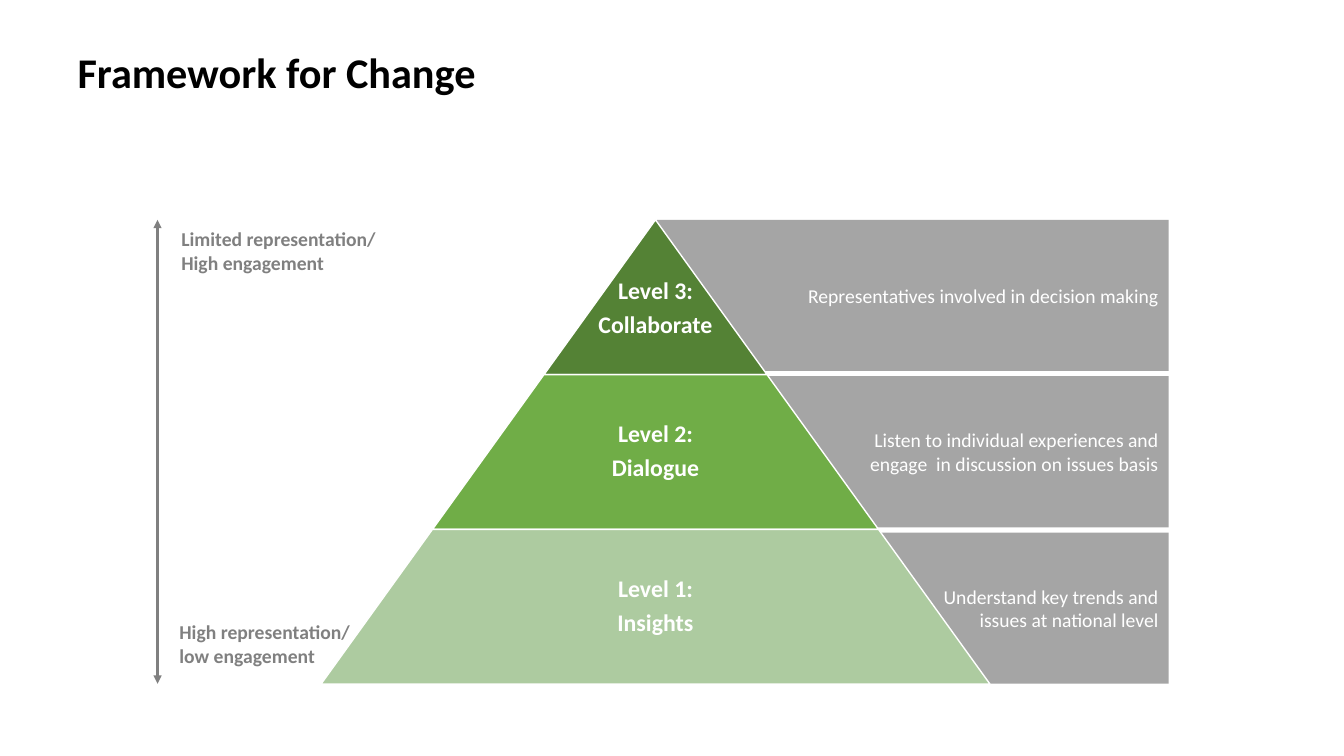
from dataclasses import dataclass

from lxml import etree
from pptx import Presentation
from pptx.dml.color import RGBColor
from pptx.enum.shapes import MSO_CONNECTOR, MSO_SHAPE
from pptx.enum.text import MSO_ANCHOR, MSO_AUTO_SIZE, PP_ALIGN
from pptx.oxml.ns import qn
from pptx.util import Cm, Pt

LEFT, CENTER, RIGHT = PP_ALIGN.LEFT, PP_ALIGN.CENTER, PP_ALIGN.RIGHT
TOP, MIDDLE, BOTTOM = MSO_ANCHOR.TOP, MSO_ANCHOR.MIDDLE, MSO_ANCHOR.BOTTOM
RECTANGLE, TRAPEZOID = MSO_SHAPE.RECTANGLE, MSO_SHAPE.TRAPEZOID


@dataclass(frozen=True)
class Theme:
    font: str = "Calibri"
    black: RGBColor = RGBColor(0x00, 0x00, 0x00)
    white: RGBColor = RGBColor(0xFF, 0xFF, 0xFF)
    panel: RGBColor = RGBColor(0xA5, 0xA5, 0xA5)
    axis: RGBColor = RGBColor(0x80, 0x80, 0x80)
    dark_green: RGBColor = RGBColor(0x54, 0x82, 0x35)
    green: RGBColor = RGBColor(0x70, 0xAD, 0x47)
    pale_green: RGBColor = RGBColor(0xAD, 0xCB, 0xA0)
    title_size: float = 30.2
    level_size: float = 17
    body_size: float = 14


THEME = Theme()


def write_text(shape, text, size, color, bold, align, anchor):
    """Fill a shape with text, one paragraph per line."""
    frame = shape.text_frame
    frame.word_wrap = True
    frame.auto_size = MSO_AUTO_SIZE.NONE
    frame.vertical_anchor = anchor
    frame.text = text
    for paragraph in frame.paragraphs:
        paragraph.alignment = align
        font = paragraph.runs[0].font
        font.name = THEME.font
        font.size = Pt(size)
        font.bold = bold
        font.color.rgb = color


def add_filled_shape(kind, left, top, width, height, color):
    """Add a flat preset shape without outline; lengths in cm."""
    shape = slide.shapes.add_shape(kind, Cm(left), Cm(top), Cm(width), Cm(height))
    shape.shadow.inherit = False
    shape.fill.solid()
    shape.fill.fore_color.rgb = color
    shape.line.fill.background()
    return shape


presentation = Presentation()
presentation.slide_width = Cm(33.87)
presentation.slide_height = Cm(19.05)
slide = presentation.slides.add_slide(presentation.slide_layouts[5])

# Title
title = slide.shapes.title
title.left, title.top, title.width, title.height = Cm(1.7), Cm(1.19), Cm(21.92), Cm(2.49)
write_text(title, "Framework for Change", THEME.title_size, THEME.black, True, LEFT, TOP)
title.text_frame.paragraphs[0].line_spacing = 0.9

# Grey description panels, behind the pyramid
diagram_top = 5.54
panel_right, panel_height, panel_step = 29.45, 3.81, 3.94
panels = [
    (16.56, "Representatives involved in decision making"),
    (18.75, "Listen to individual experiences and\nengage  in discussion on issues basis"),
    (21.84, "Understand key trends and\nissues at national level"),
]
for row, (left, description) in enumerate(panels):
    panel = add_filled_shape(RECTANGLE, left, diagram_top + row * panel_step,
                             panel_right - left, panel_height, THEME.panel)
    write_text(panel, description, THEME.body_size, THEME.white, False, RIGHT, MIDDLE)

# Pyramid tiers; each one widens by the same slope on both sides
apex_x, tier_height, tier_slope = 16.52, 3.9, 2.81
label_width, label_inset = 5.6, 0.05
tiers = [
    ("Level 3:\nCollaborate", THEME.dark_green, 0.6),
    ("Level 2:\nDialogue", THEME.green, 0),
    ("Level 1:\nInsights", THEME.pale_green, 0),
]
for row, (level, color, extra_inset) in enumerate(tiers):
    half_width = tier_slope * (row + 1)
    top = diagram_top + row * tier_height
    tier = add_filled_shape(TRAPEZOID, apex_x - half_width, top,
                            2 * half_width, tier_height, color)
    tier.adjustments[0] = tier_slope / tier_height
    tier.line.color.rgb = THEME.white
    tier.line.width = Pt(1)

    label = slide.shapes.add_textbox(Cm(apex_x - label_width / 2), Cm(top),
                                     Cm(label_width), Cm(tier_height))
    write_text(label, level, THEME.level_size, THEME.white, True, CENTER, MIDDLE)
    frame = label.text_frame
    frame.margin_left = frame.margin_right = frame.margin_bottom = Cm(label_inset)
    frame.margin_top = Cm(label_inset + extra_inset)
    for paragraph in frame.paragraphs:
        paragraph.line_spacing = 0.9
        paragraph.space_after = Pt(6)

# Double-headed engagement axis
axis_x, axis_bottom = 3.97, 17.23
axis = slide.shapes.add_connector(MSO_CONNECTOR.STRAIGHT, Cm(axis_x), Cm(diagram_top),
                                  Cm(axis_x), Cm(axis_bottom))
axis.line.color.rgb = THEME.axis
axis.line.width = Pt(1.5)
for end in ("a:headEnd", "a:tailEnd"):
    etree.SubElement(axis.line._get_or_add_ln(), qn(end), type="triangle")
etree.SubElement(axis._element.spPr, qn("a:effectLst"))

# Labels at both ends of the axis
axis_labels = [
    (4.32, 5.6, 7, "Limited representation/\nHigh engagement", TOP),
    (4.27, 15.44, 7, "High representation/\nlow engagement", BOTTOM),
]
for left, top, width, caption, anchor in axis_labels:
    box = slide.shapes.add_textbox(Cm(left), Cm(top), Cm(width), Cm(1.5))
    write_text(box, caption, THEME.body_size, THEME.axis, True, LEFT, anchor)

presentation.save("out.pptx")
